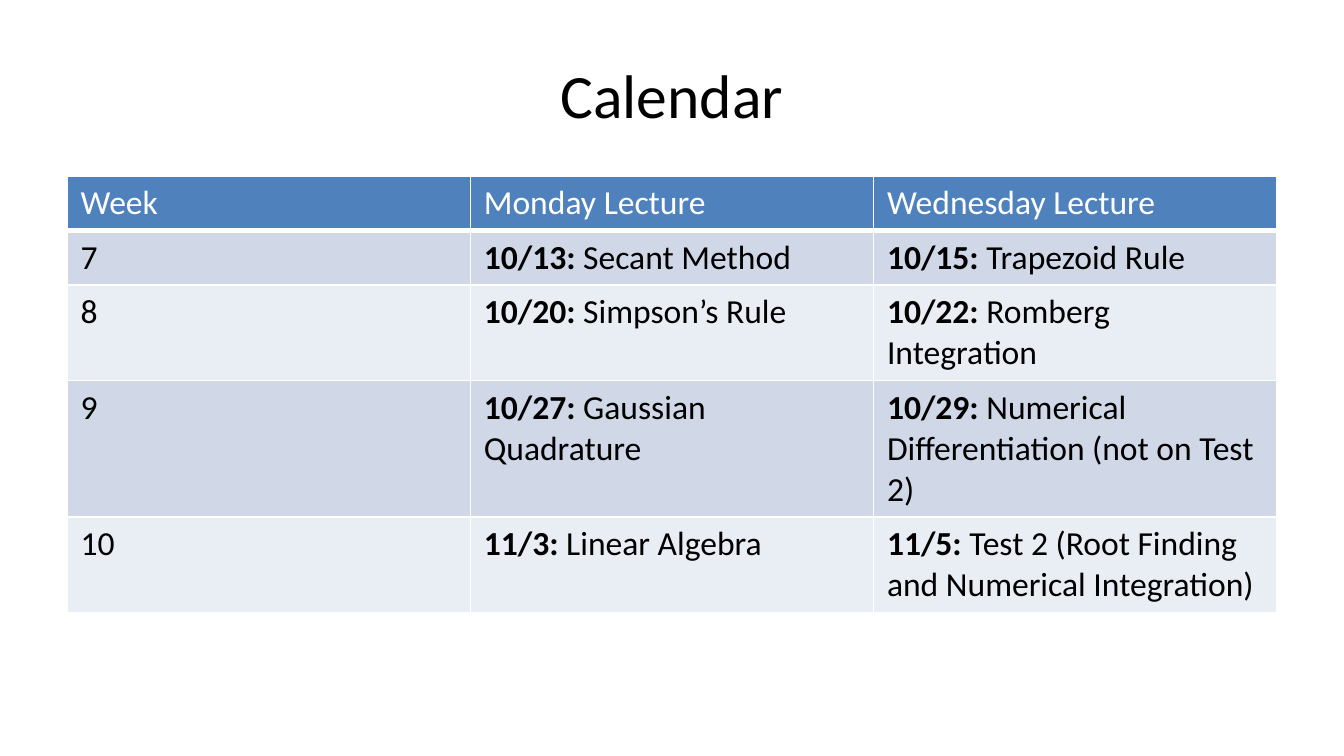
from dataclasses import dataclass

import pptx
import pptx.dml.color
import pptx.enum.text
import pptx.oxml
import pptx.oxml.ns
import pptx.presentation
import pptx.slide
import pptx.table
import pptx.text.text
from pptx.util import Cm

RGBColor = pptx.dml.color.RGBColor
BLACK = RGBColor(0x00, 0x00, 0x00)
WHITE = RGBColor(0xFF, 0xFF, 0xFF)
HEADER_BLUE = RGBColor(0x4F, 0x81, 0xBD)
BAND_COLORS = (RGBColor(0xD0, 0xD8, 0xE8), RGBColor(0xE9, 0xED, 0xF4))

FONT = "Calibri"
MARGIN = 1.27
TABLE_WIDTH = 22.86
COLUMNS = ("Week", "Monday Lecture", "Wednesday Lecture")


@dataclass(frozen=True)
class Lecture:
    date: str
    topic: str


@dataclass(frozen=True)
class Week:
    number: int
    monday: Lecture
    wednesday: Lecture
    lines: int  # text lines in the tallest cell


WEEKS = (
    Week(7, Lecture("10/13:", "Secant Method"),
         Lecture("10/15:", "Trapezoid Rule"), 1),
    Week(8, Lecture("10/20:", "Simpson’s Rule"),
         Lecture("10/22:", "Romberg Integration"), 2),
    Week(9, Lecture("10/27:", "Gaussian Quadrature"),
         Lecture("10/29:", "Numerical Differentiation (not on Test 2)"), 3),
    Week(10, Lecture("11/3:", "Linear Algebra"),
         Lecture("11/5:", "Test 2 (Root Finding and Numerical Integration)"), 2),
)


def row_height(lines: int) -> int:
    return Cm(0.25 + 0.77 * lines)


def format_run(run: pptx.text.text._Run, size: float, color: RGBColor,
               bold: bool = False) -> None:
    run.font.name = FONT
    run.font.size = pptx.util.Pt(size)
    run.font.bold = bold
    run.font.color.rgb = color


def style_cell(cell: pptx.table._Cell, fill: RGBColor, bottom_width: float = 1) -> None:
    """Draw white borders, then fill the cell."""
    properties = cell._tc.get_or_add_tcPr()
    for side, width in (("L", 1), ("R", 1), ("T", 1), ("B", bottom_width)):
        properties.append(pptx.oxml.parse_xml(
            f'<a:ln{side} {pptx.oxml.ns.nsdecls("a")} w="{pptx.util.Pt(width)}">'
            f'<a:solidFill><a:srgbClr val="{WHITE}"/></a:solidFill></a:ln{side}>'))
    cell.fill.solid()
    cell.fill.fore_color.rgb = fill


def write_label(cell: pptx.table._Cell, label: str, color: RGBColor) -> None:
    cell.text_frame.text = label
    format_run(cell.text_frame.paragraphs[0].runs[0], 18, color)


def write_lecture(cell: pptx.table._Cell, lecture: Lecture) -> None:
    entry = cell.text_frame.paragraphs[0]
    entry.text = lecture.date
    format_run(entry.runs[0], 18, BLACK, bold=True)
    topic = entry.add_run()
    topic.text = f" {lecture.topic}"
    format_run(topic, 18, BLACK)


def add_title(slide: pptx.slide.Slide, wording: str) -> None:
    title = slide.shapes.title
    title.left, title.top = Cm(MARGIN), Cm(0.58)
    title.width, title.height = Cm(TABLE_WIDTH), Cm(2.39)
    title.text_frame.text = wording
    title.text_frame.vertical_anchor = pptx.enum.text.MSO_ANCHOR.MIDDLE
    heading = title.text_frame.paragraphs[0]
    heading.alignment = pptx.enum.text.PP_ALIGN.CENTER
    format_run(heading.runs[0], 33, BLACK)


def add_calendar(slide: pptx.slide.Slide) -> None:
    height = row_height(1) + sum(row_height(week.lines) for week in WEEKS)
    calendar = slide.shapes.add_table(
        len(WEEKS) + 1, len(COLUMNS),
        Cm(MARGIN), Cm(3.33), Cm(TABLE_WIDTH), height).table
    for column in calendar.columns:
        column.width = Cm(TABLE_WIDTH / len(COLUMNS))

    # Header row
    calendar.rows[0].height = row_height(1)
    for cell, label in zip(calendar.rows[0].cells, COLUMNS):
        style_cell(cell, HEADER_BLUE, bottom_width=3)
        write_label(cell, label, WHITE)

    # One banded row per week
    for index, week in enumerate(WEEKS):
        row = calendar.rows[index + 1]
        row.height = row_height(week.lines)
        for cell in row.cells:
            style_cell(cell, BAND_COLORS[index % 2])
        number, monday, wednesday = row.cells
        write_label(number, str(week.number), BLACK)
        write_lecture(monday, week.monday)
        write_lecture(wednesday, week.wednesday)


def main() -> None:
    presentation = pptx.Presentation()
    presentation.slide_width = Cm(25.4)
    presentation.slide_height = Cm(14.29)
    slide = presentation.slides.add_slide(presentation.slide_layouts[5])
    slide.background.fill.solid()
    slide.background.fill.fore_color.rgb = WHITE
    add_title(slide, "Calendar")
    add_calendar(slide)
    presentation.save("out.pptx")


if __name__ == "__main__":
    main()
